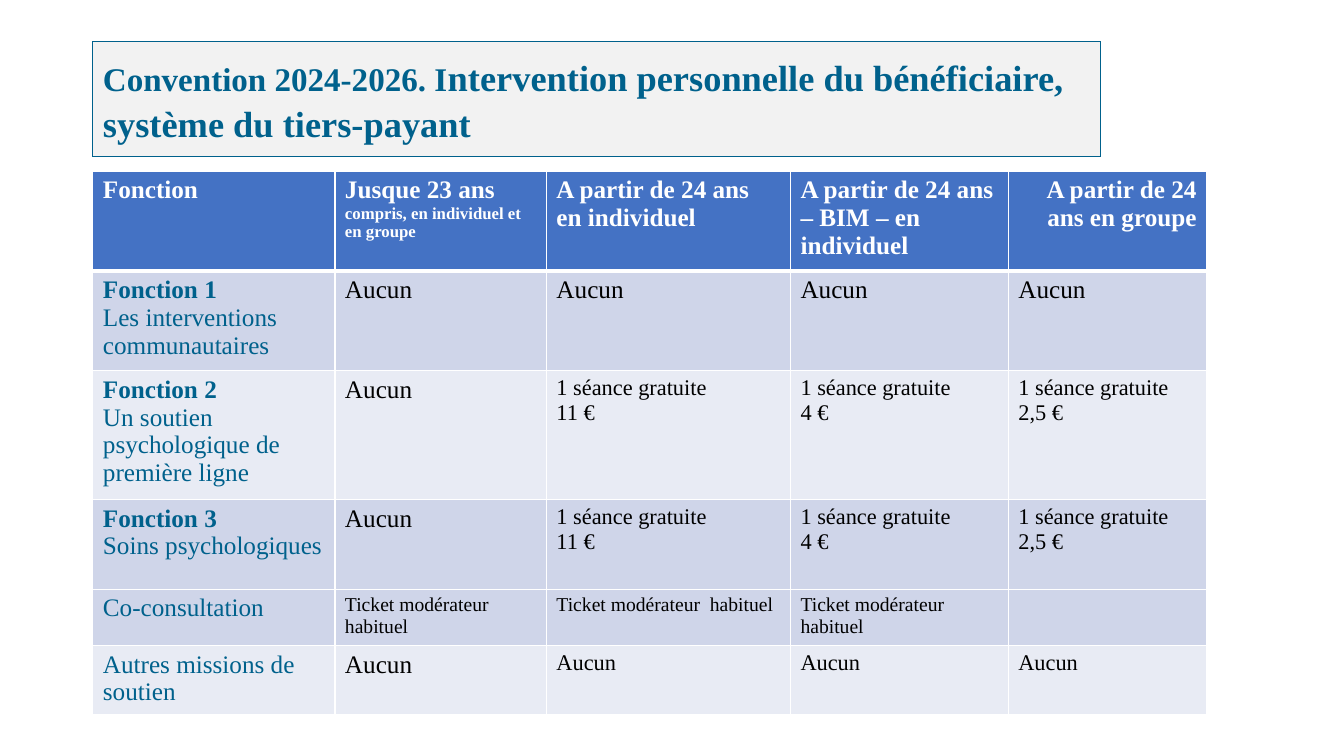
from lxml import etree
from pptx import Presentation
from pptx import util as u
from pptx.dml import color
from pptx.enum import text
from pptx.oxml import ns

COLOURS = {"teal": "00618C", "panel": "F2F2F2", "header": "4472C4", "dark band": "CFD5E9",
           "light band": "E8EBF4", "white": "FFFFFF", "black": "000000"}
FONT = "Times New Roman"


def add_run(paragraph, words, size, colour, bold=False):
    run = paragraph.add_run()
    run.text = words
    run.font.name = FONT
    run.font.size = u.Pt(size)
    run.font.bold = bold
    run.font.color.rgb = color.RGBColor.from_string(COLOURS[colour])


def add_borders(cell, top, bottom):
    # Border lines come first in the cell properties, in the order L, R, T, B
    properties = cell._tc.get_or_add_tcPr()
    for position, (side, points) in enumerate(
            [("lnL", 0.96), ("lnR", 0.96), ("lnT", top), ("lnB", bottom)]):
        line = etree.Element(ns.qn(f"a:{side}"), w=str(u.Pt(points)))
        fill = etree.SubElement(line, ns.qn("a:solidFill"))
        etree.SubElement(fill, ns.qn("a:srgbClr"), val=COLOURS["white"])
        properties.insert(position, line)


presentation = Presentation()
presentation.slide_width, presentation.slide_height = u.Cm(33.87), u.Cm(19.05)
slide = presentation.slides.add_slide(presentation.slide_layouts[5])

# Title in a rounded panel
title = slide.shapes.title
title.left, title.top, title.width, title.height = u.Cm(2.34), u.Cm(1.04), u.Cm(25.4), u.Cm(2.9)
outline = etree.Element(ns.qn("a:prstGeom"), prst="roundRect")
etree.SubElement(outline, ns.qn("a:avLst"))
title._element.spPr.insert(1, outline)
title.fill.solid()
title.fill.fore_color.rgb = color.RGBColor.from_string(COLOURS["panel"])
title.line.color.rgb = color.RGBColor.from_string(COLOURS["teal"])
title.line.width = u.Pt(0)
title.text_frame.word_wrap = True
title.text_frame.auto_size = text.MSO_AUTO_SIZE.NONE
title.text_frame.vertical_anchor = text.MSO_ANCHOR.MIDDLE
heading = title.text_frame.paragraphs[0]
heading.alignment = text.PP_ALIGN.LEFT
heading.line_spacing = 1.05
add_run(heading, "Convention 2024-2026. I", 23.6, "teal", True)
add_run(heading, "ntervention personnelle du bénéficiaire, système du tiers-payant", 26, "teal", True)

# Table content: each cell lists its paragraphs
headers = ["Fonction", "Jusque 23 ans ", "A partir de 24 ans en individuel",
           "A partir de 24 ans – BIM – en individuel", "A partir de 24 ans en groupe"]
free = ["Aucun"]
ticket = ["Ticket modérateur  habituel"]
fees = [["1 séance gratuite", fee] for fee in ("11 €", "4 €", "2,5 €")]
# Function, its fees, size in the second column, size in the others, band
functions = [
    (["Fonction 1", "Les interventions communautaires"], [free] * 4, 18, 18, "dark band"),
    (["Fonction 2", "Un soutien psychologique de première ligne"], [free, *fees], 18, 16, "light band"),
    (["Fonction 3", "Soins psychologiques"], [free, *fees], 18, 16, "dark band"),
    (["Co-consultation"], [ticket] * 3 + [[]], 14, 14, "dark band"),
    (["Autres missions de soutien"], [free] * 4, 18, 16, "light band"),
]
column_widths = [6.1, 5.33, 6.15, 5.49, 5]
row_heights = [2.51, 2.51, 3.25, 2.26, 1.42, 1.75]

# Table grid
fee_table = slide.shapes.add_table(len(row_heights), len(column_widths), u.Cm(2.34), u.Cm(4.32),
                                   u.Cm(sum(column_widths)), u.Cm(sum(row_heights))).table
for column, width in zip(fee_table.columns, column_widths):
    column.width = u.Cm(width)
for row, height in zip(fee_table.rows, row_heights):
    row.height = u.Cm(height)

# Header row
for cell, words in zip(fee_table.rows[0].cells, headers):
    add_run(cell.text_frame.paragraphs[0], words, 18, "white", True)
add_run(fee_table.cell(0, 1).text_frame.paragraphs[0],
        "compris, en individuel et en groupe", 12, "white", True)
fee_table.cell(0, 4).text_frame.paragraphs[0].alignment = text.PP_ALIGN.RIGHT

# Function rows
for r, (function, amounts, young_size, adult_size, band) in enumerate(functions, 1):
    sizes = [18, young_size] + [adult_size] * 3
    for c, (lines, size) in enumerate(zip([function, *amounts], sizes)):
        frame = fee_table.cell(r, c).text_frame
        for i, words in enumerate(lines):
            paragraph = frame.add_paragraph() if i else frame.paragraphs[0]
            is_name = c == 0 and i == 0 and len(lines) == 2
            add_run(paragraph, words, size, "black" if c else "teal", is_name)

# Fills and borders, with a thick rule under the header
bands = ["header"] + [function[-1] for function in functions]
for r, (row, band) in enumerate(zip(fee_table.rows, bands)):
    for cell in row.cells:
        cell.fill.solid()
        cell.fill.fore_color.rgb = color.RGBColor.from_string(COLOURS[band])
        add_borders(cell, 3 if r == 1 else 0.96, 3 if r == 0 else 0.96)

presentation.save("out.pptx")
